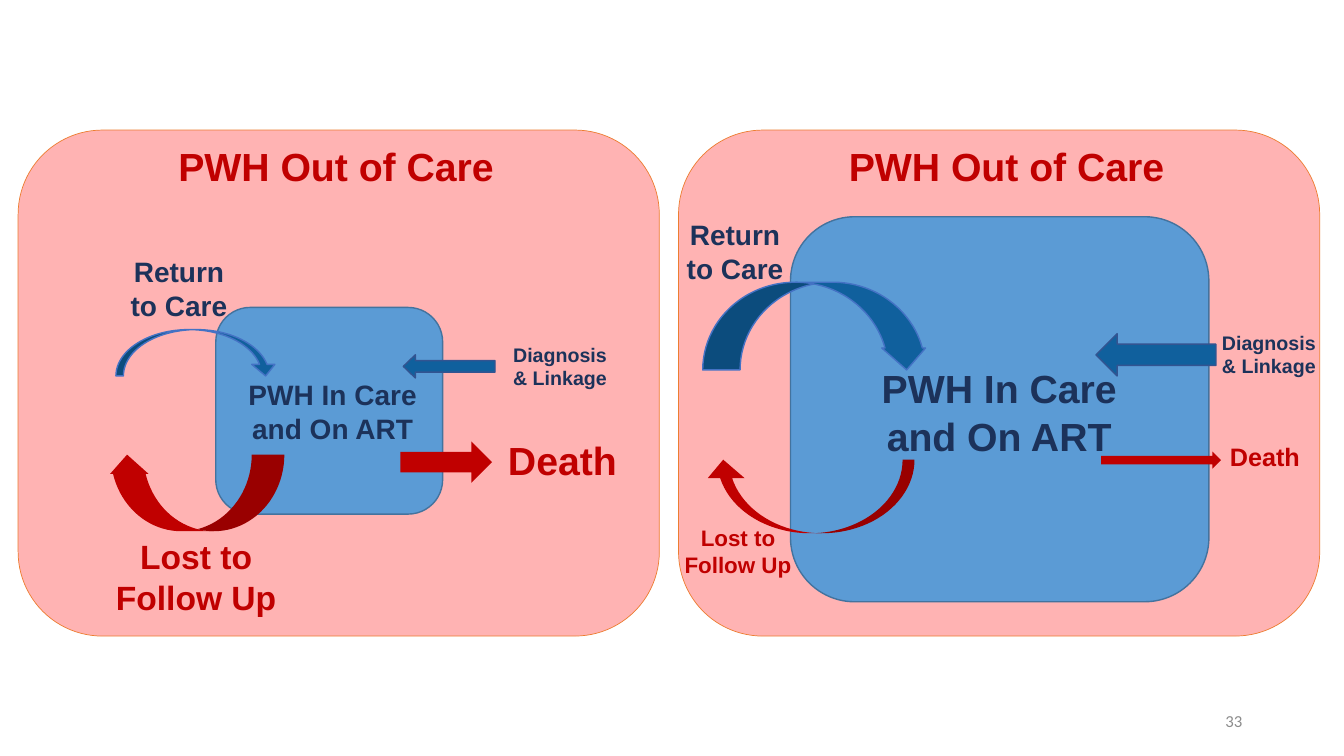
from pptx import Presentation
from pptx.dml.color import RGBColor
from pptx.enum.shapes import MSO_SHAPE
from pptx.enum.text import MSO_ANCHOR, PP_ALIGN
from pptx.util import Inches, Pt

ROUNDED = MSO_SHAPE.ROUNDED_RECTANGLE
CURVED = MSO_SHAPE.CURVED_DOWN_ARROW
LEFT_ARROW, RIGHT_ARROW = MSO_SHAPE.LEFT_ARROW, MSO_SHAPE.RIGHT_ARROW
LEFT, CENTER, RIGHT = PP_ALIGN.LEFT, PP_ALIGN.CENTER, PP_ALIGN.RIGHT
TOP, MIDDLE = MSO_ANCHOR.TOP, MSO_ANCHOR.MIDDLE

WIDTH, HEIGHT = 13.33, 7.5
CELL = 0.1  # inches per grid column and row

RED, NAVY, BLUE, GREY = "C00000", "1C325A", "10609D", "8C8C8C"
PINK, ORANGE, SKY, SKY_EDGE = "FFB3B3", "ED7D31", "5B9BD5", "43739E"
CURVE_EDGE, ARROW_EDGE = "4472C4", "325491"
THIN, THICK = 0.162, 0.426  # shaft widths of the curved arrows


def color(hex_string):
    return RGBColor.from_string(hex_string)


def grid(box):
    """Turn (column, row, columns, rows) into slide lengths."""
    return [Inches(cells * CELL) for cells in box]


class SlideBuilder:
    def __init__(self, presentation):
        self.slide = presentation.slides.add_slide(presentation.slide_layouts[6])
        self.font = "Arial"

    def shape(self, kind, box, fill, edge=None, edge_width=1, adjustments=(), rotation=0):
        shape = self.slide.shapes.add_shape(kind, *grid(box))
        shape.shadow.inherit = False
        shape.rotation = rotation
        shape.fill.solid()
        shape.fill.fore_color.rgb = color(fill)
        if edge:
            shape.line.color.rgb = color(edge)
            shape.line.width = Pt(edge_width)
        else:
            shape.line.fill.background()
        for index, value in enumerate(adjustments):
            shape.adjustments[index] = value

    def curve(self, box, shaft, fill, edge=None, rotation=0):
        self.shape(CURVED, box, fill, edge, adjustments=(shaft, 0.5, 0.25), rotation=rotation)

    def text(self, words, box, size, ink, align=CENTER, bold=True, font=None, anchor=TOP):
        frame = self.slide.shapes.add_textbox(*grid(box)).text_frame
        frame.word_wrap = True
        frame.vertical_anchor = anchor
        paragraph = frame.paragraphs[0]
        paragraph.text = words
        paragraph.alignment = align
        paragraph.font.name = font or self.font
        paragraph.font.size = Pt(size)
        paragraph.font.bold = bold
        paragraph.font.color.rgb = color(ink)

    def care_panel(self, panel):
        """Draw one population with its in-care group and the flows around it."""
        self.shape(ROUNDED, (panel["left"], 12.9, 63.6, 50.2), PINK, ORANGE, 0.5)
        self.shape(ROUNDED, panel["in_care"], SKY, SKY_EDGE)
        self.text("PWH Out of Care", (panel["title_left"], 13.6, 33.9, 5.7), 28, RED, LEFT)
        for words, key, ink, align in LABELS:
            box, size = panel[key]
            self.text(words, box, size, ink, align)
        self.curve(*panel["return_arrow"], BLUE, CURVE_EDGE)
        self.curve(*panel["lost_arrow"], RED, rotation=180)
        diagnosis_box, adjustments = panel["diagnosis_arrow"]
        self.shape(LEFT_ARROW, diagnosis_box, BLUE, ARROW_EDGE, adjustments=adjustments)
        self.shape(RIGHT_ARROW, panel["death_arrow"], RED)


LABELS = [
    ("PWH In Care and On ART", "in_care_label", NAVY, CENTER),
    ("Return to Care", "return_label", NAVY, CENTER),
    ("Lost to Follow Up", "lost_label", RED, CENTER),
    ("Diagnosis & Linkage", "diagnosis_label", NAVY, CENTER),
    ("Death", "death_label", RED, LEFT),
]

SMALL_IN_CARE = {
    "left": 1.8,
    "title_left": 16.7,
    "in_care": (21.4, 30.5, 22.5, 20.5),
    "in_care_label": ((22.7, 37, 20.6, 7.7), 20),
    "return_label": ((11.5, 24.8, 12.5, 7.7), 20),
    "lost_label": ((8.2, 52.7, 22.5, 9.1), 24),
    "diagnosis_label": ((49.4, 33.5, 12.3, 5.7), 14),
    "death_label": ((49.4, 42.8, 13.6, 5.7), 28),
    "return_arrow": ((11.5, 32.7, 16, 4.6), THIN),
    "lost_arrow": ((10.7, 45.1, 17.5, 7.6), THICK),
    "diagnosis_arrow": ((40, 35.2, 9.1, 2.3), (0.5, 0.52)),
    "death_arrow": (39.7, 43.8, 9.1, 4.1),
}

LARGE_IN_CARE = {
    "left": 67.3,
    "title_left": 83.2,
    "in_care": (78.4, 21.5, 41.5, 38.2),
    "in_care_label": ((85.9, 35.7, 26.4, 10.4), 28),
    "return_label": ((66.8, 21.1, 12.2, 7.7), 20),
    "lost_label": ((66.7, 51.5, 13, 6.4), 16),
    "diagnosis_label": ((119.9, 32.3, 11.9, 5.7), 14),
    "death_label": ((121, 43.3, 9.4, 4), 18),
    "return_arrow": ((69.7, 28, 22.4, 8.7), THICK),
    "lost_arrow": ((69.9, 45.6, 20.8, 7.3), THIN),
    "diagnosis_arrow": ((108.7, 33.1, 11.9, 4.2), (0.5, 0.5)),
    "death_arrow": (109.2, 44.8, 11.9, 1.7),
}


def main():
    presentation = Presentation()
    presentation.slide_width = Inches(WIDTH)
    presentation.slide_height = Inches(HEIGHT)
    builder = SlideBuilder(presentation)
    for panel in (SMALL_IN_CARE, LARGE_IN_CARE):
        builder.care_panel(panel)
    builder.text("33", (94.2, 69.5, 30, 4), 12, GREY, RIGHT, False, "Calibri", MIDDLE)
    presentation.save("out.pptx")


if __name__ == "__main__":
    main()
